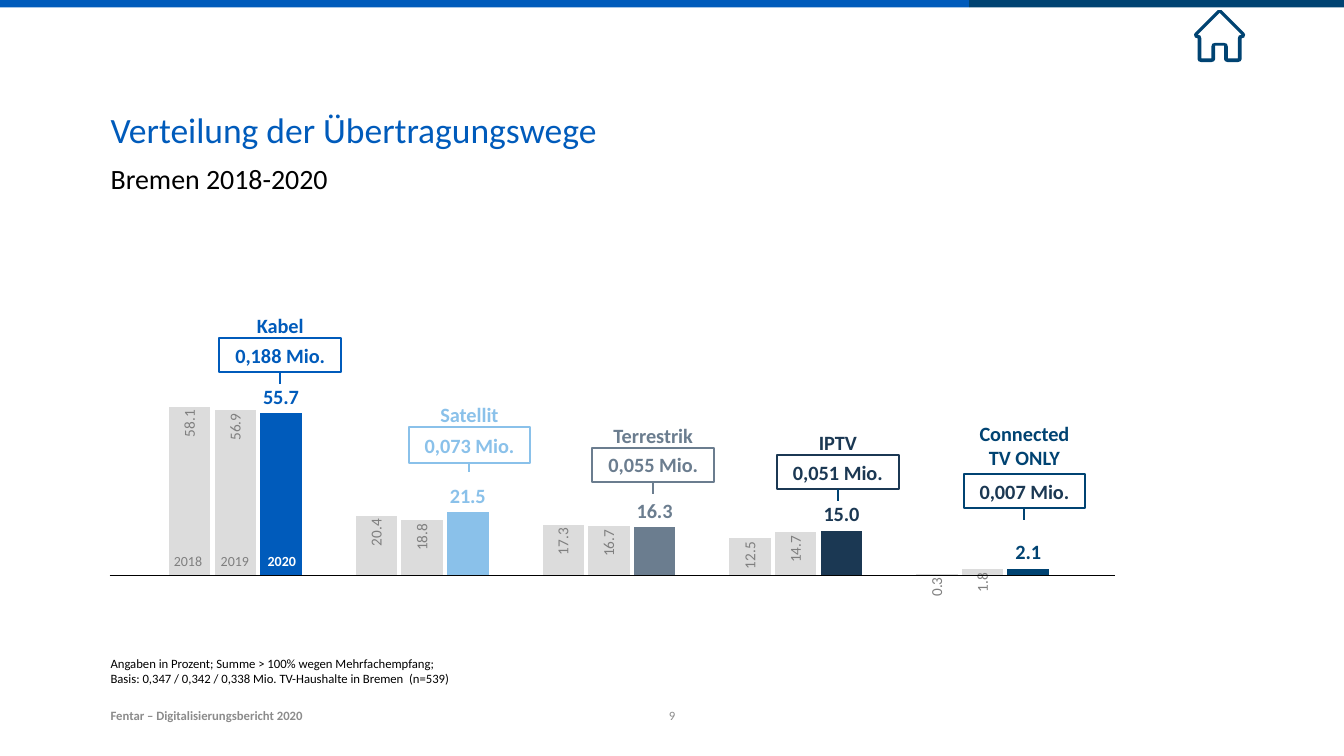
from lxml import etree
from pptx import Presentation
from pptx.chart.data import CategoryChartData
from pptx.dml.color import RGBColor
from pptx.enum.chart import XL_CHART_TYPE as ChartType, XL_LABEL_POSITION as LabelPos
from pptx.enum.shapes import MSO_CONNECTOR as Connector, MSO_SHAPE as Shape
from pptx.enum.text import MSO_ANCHOR as Anchor, PP_ALIGN as Align
from pptx.oxml.ns import qn
from pptx.util import Inches, Pt

FONT = "Calibri"
COLORS = {
    "blue": "005BBB", "petrol": "004372", "sky": "8AC1EA", "slate": "6B7D8F",
    "navy": "1B3853", "bar": "DCDCDC", "label": "7F7F7F", "footer": "8C8C8C",
    "black": "000000", "white": "FFFFFF",
}
SHARES = {
    "Series 1": (58.1, 20.4, 17.3, 12.5, 0.3),
    "Series 2": (56.9, 18.8, 16.7, 14.7, 1.8),
    "Series 3": (55.7, 21.5, 16.3, 15.0, 2.1),
}
PATH_COLORS = ("blue", "sky", "slate", "navy", "petrol")
CALLOUT_WIDTH = 1.33
NO_STYLE = "{2D5ABB26-0587-4C30-8999-92F81FD0307C}"


def rgb(name):
    return RGBColor.from_string(COLORS[name])


def set_font(font, size, color, bold=False):
    font.name, font.size, font.bold = FONT, Pt(size), bold
    font.color.rgb = rgb(color)


def write(frame, text, size=16, color="black", bold=False, align=Align.LEFT,
          anchor=Anchor.TOP, insets=(0, 0), spacing=None):
    frame.word_wrap = True
    frame.vertical_anchor = anchor
    frame.margin_left = frame.margin_right = Inches(insets[0])
    frame.margin_top = frame.margin_bottom = Inches(insets[1])
    paragraph = frame.paragraphs[0]
    paragraph.text = text
    paragraph.alignment = align
    if spacing:
        paragraph.line_spacing = Pt(spacing)
    for run in paragraph.runs:
        set_font(run.font, size, color, bold)


def add_text(slide, text, left, top, width, height, **style):
    area = slide.shapes.add_textbox(*map(Inches, (left, top, width, height)))
    write(area.text_frame, text, **style)


def add_box(slide, left, top, width, height, fill=None, outline=None):
    box = slide.shapes.add_shape(Shape.RECTANGLE, *map(Inches, (left, top, width, height)))
    box.shadow.inherit = False
    if fill:
        box.fill.solid()
        box.fill.fore_color.rgb = rgb(fill)
    else:
        box.fill.background()
    if outline:
        box.line.color.rgb = rgb(outline)
        box.line.width = Pt(1.5)
    else:
        box.line.fill.background()
    return box


def add_line(slide, x1, y1, x2, y2, color, width):
    line = slide.shapes.add_connector(Connector.STRAIGHT, *map(Inches, (x1, y1, x2, y2)))
    line.line.color.rgb = rgb(color)
    line.line.width = Pt(width)
    etree.SubElement(line._element.spPr, qn("a:effectLst"))


def add_home_icon(slide, center=13.34):
    # Left halves of both contours as (distance from centre, y)
    outer = [(0.02, 0.11), (0.27, 0.36), (0.28, 0.38), (0.27, 0.41), (0.24, 0.42),
             (0.24, 0.65), (0.23, 0.67), (0.2, 0.68), (0.09, 0.68), (0.06, 0.67),
             (0.05, 0.65), (0.05, 0.5)]
    inner = [(0, 0.14), (0.24, 0.38), (0.21, 0.39), (0.2, 0.42), (0.2, 0.64),
             (0.09, 0.64), (0.09, 0.51), (0.08, 0.48), (0.05, 0.47)]

    def contour(half):
        left = [(Inches(center - dx), Inches(y)) for dx, y in half]
        right = [(Inches(center + dx), Inches(y)) for dx, y in reversed(half)]
        return left + right

    wall, room = contour(outer), contour(inner)
    builder = slide.shapes.build_freeform(*wall[0], scale=1.0)
    builder.add_line_segments(wall[1:], close=True)
    builder.move_to(*room[0])
    builder.add_line_segments(room[1:], close=True)
    icon = builder.convert_to_shape()
    icon.shadow.inherit = False
    icon.fill.solid()
    icon.fill.fore_color.rgb = rgb("petrol")
    icon.line.fill.background()


def set_plot_area(chart, **position):
    area = chart._chartSpace.find(".//" + qn("c:plotArea"))
    for old in area.findall(qn("c:layout")):
        area.remove(old)
    layout = etree.Element(qn("c:layout"))
    manual = etree.SubElement(layout, qn("c:manualLayout"))
    settings = {"layoutTarget": "inner", "xMode": "edge", "yMode": "edge", **position}
    for tag, value in settings.items():
        etree.SubElement(manual, qn("c:" + tag)).set("val", str(value))
    area.insert(0, layout)


def add_share_chart(slide):
    data = CategoryChartData(number_format="#,##0.0")
    data.categories = ["1", "2", "3", "4", "5"]
    for name, values in SHARES.items():
        data.add_series(name, values)
    chart = slide.shapes.add_chart(ChartType.COLUMN_CLUSTERED,
                                   *map(Inches, (1.24, 2.73, 11.57, 4.2)), data).chart
    chart.has_legend = chart.has_title = False
    set_font(chart.font, 18, "black")
    chart.category_axis.visible = chart.value_axis.visible = False
    chart.value_axis.has_major_gridlines = False
    chart.value_axis.minimum_scale, chart.value_axis.maximum_scale = 0, 100
    set_plot_area(chart, x=0.027, y=0.093, w=0.883, h=0.754)

    plot = chart.plots[0]
    plot.gap_width, plot.overlap = 130, -10
    plot.vary_by_categories = False
    *earlier, current = plot.series
    for series in plot.series:
        series.format.fill.solid()
        series.format.fill.fore_color.rgb = rgb("bar")
        series.invert_if_negative = False
        labels = series.data_labels
        labels.show_value = True
        labels.number_format, labels.number_format_is_linked = "#,##0.0", False

    # Earlier years: grey upright labels inside the bars
    for series in earlier:
        labels = series.data_labels
        labels.position = LabelPos.INSIDE_END
        set_font(labels.font, 12, "label")
        body = labels._element.find(qn("c:txPr")).find(qn("a:bodyPr"))
        body.set("rot", "-5400000")
        body.set("vert", "horz")

    # 2020: one colour per transmission path
    current.data_labels.position = LabelPos.OUTSIDE_END
    set_font(current.data_labels.font, 16, "label", bold=True)
    for index, color in enumerate(PATH_COLORS):
        point = current.points[index]
        point.format.fill.solid()
        point.format.fill.fore_color.rgb = rgb(color)
        set_font(point.data_label.font, 16, color, bold=True)
        point.data_label.position = LabelPos.OUTSIDE_END


def add_callout(slide, path, households, left, top, color, label_rise=0.32,
                height=0.37, stem=0.13, stem_color=None, text_color=None):
    style = dict(bold=True, align=Align.CENTER, insets=(0.1, 0.05))
    box = add_box(slide, left, top, CALLOUT_WIDTH, height, outline=color)
    write(box.text_frame, households, color=text_color or color,
          anchor=Anchor.MIDDLE, **style)
    middle, bottom = left + CALLOUT_WIDTH / 2, top + height
    add_line(slide, middle, bottom, middle, bottom + stem, stem_color or color, 1.5)
    add_text(slide, path, left, top - label_rise, CALLOUT_WIDTH, label_rise + 0.05,
             color=color, **style)


def add_year_table(slide):
    table = slide.shapes.add_table(1, 3, *map(Inches, (1.8, 5.96, 1.54, 0.42))).table
    table.first_row = table.horz_banding = False
    table._tbl.tblPr.find(qn("a:tableStyleId")).text = NO_STYLE
    for cell, year in zip(table.rows[0].cells, ("2018", "2019", "2020")):
        latest = year == "2020"
        cell.fill.background()
        cell.vertical_anchor = Anchor.MIDDLE
        cell.margin_left = cell.margin_right = cell.margin_top = cell.margin_bottom = 0
        write(cell.text_frame, year, size=11, color="white" if latest else "label",
              bold=latest, align=Align.CENTER, spacing=10)


def main():
    prs = Presentation()
    prs.slide_width, prs.slide_height = Inches(14.7), Inches(8.27)
    slide = prs.slides.add_slide(prs.slide_layouts[6])

    # Header
    add_box(slide, 0, 0, 10.6, 0.08, fill="blue")
    add_box(slide, 10.6, 0, 4.1, 0.08, fill="petrol")
    add_text(slide, "Verteilung der Übertragungswege", 1.21, 1.18, 12.28, 0.59,
             size=28, color="blue")
    add_text(slide, "Bremen 2018-2020", 1.21, 1.77, 10.95, 0.79, size=22)
    add_home_icon(slide)

    # Chart with callouts
    add_share_chart(slide)
    add_callout(slide, "Kabel", "0,188 Mio.", 2.4, 3.7, "blue")
    add_callout(slide, "Satellit", "0,073 Mio.", 4.47, 4.67, "sky", height=0.4, stem=0.09)
    add_callout(slide, "Terrestrik", "0,055 Mio.", 6.48, 4.9, "slate")
    add_callout(slide, "IPTV", "0,051 Mio.", 8.5, 4.98, "navy", stem_color="petrol")
    add_callout(slide, "Connected TV ONLY", "0,007 Mio.", 10.54, 5.19, "petrol",
                label_rise=0.63, text_color="navy")
    add_year_table(slide)
    add_line(slide, 1.2, 6.29, 12.2, 6.29, "black", 0.25)

    # Notes and footer
    add_text(slide, "Angaben in Prozent; Summe > 100% wegen Mehrfachempfang;\n"
             "Basis: 0,347 / 0,342 / 0,338 Mio. TV-Haushalte in Bremen  (n=539)",
             1.21, 7.18, 11.26, 0.33, size=10, anchor=Anchor.BOTTOM)
    add_text(slide, "Fentar – Digitalisierungsbericht 2020", 1.21, 7.68, 4.18, 0.23,
             size=10, color="footer", bold=True, anchor=Anchor.BOTTOM)
    add_text(slide, "9", 7.19, 7.66, 0.32, 0.25, size=10, color="footer",
             align=Align.CENTER, anchor=Anchor.BOTTOM)
    prs.save("out.pptx")


if __name__ == "__main__":
    main()
